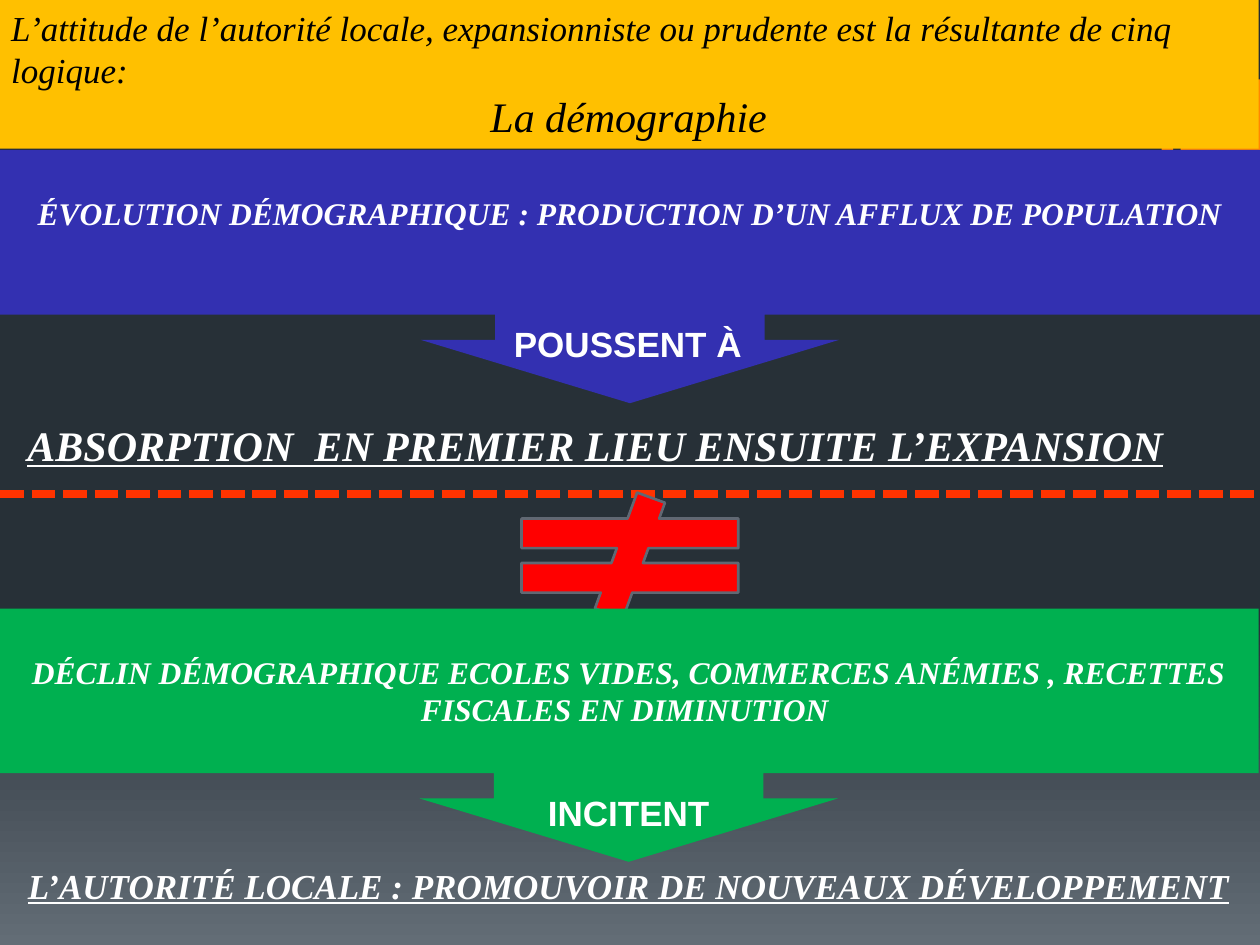
import copy

import pptx
import pptx.util
import pptx.dml.color
import pptx.enum.dml
import pptx.enum.shapes
import pptx.enum.text
import pptx.oxml

Inches = pptx.util.Inches
Pt = pptx.util.Pt
RGBColor = pptx.dml.color.RGBColor
SHAPE = pptx.enum.shapes.MSO_SHAPE
ALIGN = pptx.enum.text.PP_ALIGN

WHITE = RGBColor(0xFF, 0xFF, 0xFF)
BLACK = RGBColor(0x00, 0x00, 0x00)
ORANGE = RGBColor(0xFF, 0x86, 0x00)
YELLOW = RGBColor(0xFF, 0xC0, 0x00)
BLUE = RGBColor(0x33, 0x30, 0xB1)
GREEN = RGBColor(0x00, 0xB0, 0x50)
RED = RGBColor(0xFF, 0x00, 0x00)
DASH_RED = RGBColor(0xFF, 0x33, 0x00)
GREY = RGBColor(0x61, 0x68, 0x73)
BACKDROP = [(0, RGBColor(0x24, 0x2C, 0x33)),
            (0.65, RGBColor(0x27, 0x30, 0x37)),
            (1, RGBColor(0x63, 0x6D, 0x76))]
SERIF = "Times New Roman"
SANS = "Arial"


def add_block(kind, box, color):
    sp = s.shapes.add_shape(kind, *[Inches(v) for v in box])
    sp.shadow.inherit = False
    sp.fill.solid()
    sp.fill.fore_color.rgb = color
    sp.line.fill.background()
    return sp


def write(p, text, size, name=SERIF, color=WHITE, bold=True, italic=True,
          underline=None, align=ALIGN.CENTER):
    p.text = text
    p.alignment = align
    p.font.size = Pt(size)
    p.font.name = name
    p.font.color.rgb = color
    p.font.bold = bold
    p.font.italic = italic
    p.font.underline = underline


prs = pptx.Presentation()
prs.slide_width = Inches(10)
prs.slide_height = Inches(7.5)
s = prs.slides.add_slide(prs.slide_layouts[6])

# Background gradient, from top to bottom
fill = s.background.fill
fill.gradient()
fill.gradient_angle = 270
gs_list = fill.gradient_stops[0]._gs.getparent()
gs_list.append(copy.deepcopy(gs_list[-1]))
for stop, (position, color) in zip(fill.gradient_stops, BACKDROP):
    stop.position = position
    stop.color.rgb = color

# Orange accents at the right edge
for left, width in [(9.22, 0.09), (9.37, 0.63)]:
    add_block(SHAPE.RECTANGLE, (left, 0.63, width, 0.63), ORANGE)

# Dashed divider and "not equal" sign
line = s.shapes.add_connector(pptx.enum.shapes.MSO_CONNECTOR.STRAIGHT,
                              Inches(0), Inches(3.92), Inches(10), Inches(3.92))
line.line.color.rgb = DASH_RED
line.line.width = Pt(4.5)
line.line.dash_style = pptx.enum.dml.MSO_LINE.SQUARE_DOT
line._element.spPr.append(pptx.oxml.parse_xml(
    '<a:effectLst xmlns:a="http://schemas.openxmlformats.org/drawingml/2006/main"/>'))
sign = add_block(SHAPE.MATH_NOT_EQUAL, (3.83, 3.91, 2.34, 1), RED)
sign.line.color.rgb = GREY
sign.line.width = Pt(1.5)

# Arrow callouts
callouts = [
    (0, 1.19, BLUE, "ÉVOLUTION DÉMOGRAPHIQUE : PRODUCTION D’UN AFFLUX DE POPULATION"),
    (-0.01, 4.83, GREEN, "DÉCLIN DÉMOGRAPHIQUE ECOLES VIDES, COMMERCES ANÉMIES , "
                         "RECETTES FISCALES EN DIMINUTION "),
]
for left, top, color, text in callouts:
    sp = add_block(SHAPE.DOWN_ARROW_CALLOUT, (left, top, 10, 2.01), color)
    for i, value in enumerate([1.064, 0.826, 0.25, 0.65]):
        sp.adjustments[i] = value
    tf = sp.text_frame
    tf.word_wrap = True
    tf.vertical_anchor = pptx.enum.text.MSO_ANCHOR.TOP
    tf.margin_top = Inches(0.35)
    write(tf.paragraphs[0], text, 18)

# Arrow labels and conclusions
labels = [
    ((3.98, 2.51, 2.03, 0.44), "POUSSENT À", False,
     dict(size=20, name=SANS, italic=False, align=ALIGN.LEFT)),
    ((0.12, 3.28, 9.76, 0.5), "ABSORPTION  EN PREMIER LIEU ENSUITE L’EXPANSION", False,
     dict(size=24, underline=True, align=ALIGN.LEFT)),
    ((4.25, 6.23, 1.5, 0.44), "INCITENT", False,
     dict(size=20, name=SANS, italic=False, align=ALIGN.LEFT)),
    ((-0.01, 6.81, 10, 0.77), "L’AUTORITÉ LOCALE : PROMOUVOIR DE NOUVEAUX DÉVELOPPEMENT", True,
     dict(size=20, underline=True)),
]
for box, text, wrap, style in labels:
    tf = s.shapes.add_textbox(*[Inches(v) for v in box]).text_frame
    tf.word_wrap = wrap
    write(tf.paragraphs[0], text, **style)

# Title band
tf = add_block(SHAPE.RECTANGLE, (-0.01, 0, 10, 1.18), YELLOW).text_frame
tf.word_wrap = True
tf.vertical_anchor = pptx.enum.text.MSO_ANCHOR.TOP
write(tf.paragraphs[0], "L’attitude de l’autorité locale, expansionniste ou prudente "
      "est la résultante de cinq logique:", 20, color=BLACK, bold=False, align=ALIGN.LEFT)
write(tf.add_paragraph(), "La démographie", 24, color=BLACK, bold=False)

prs.save("out.pptx")
